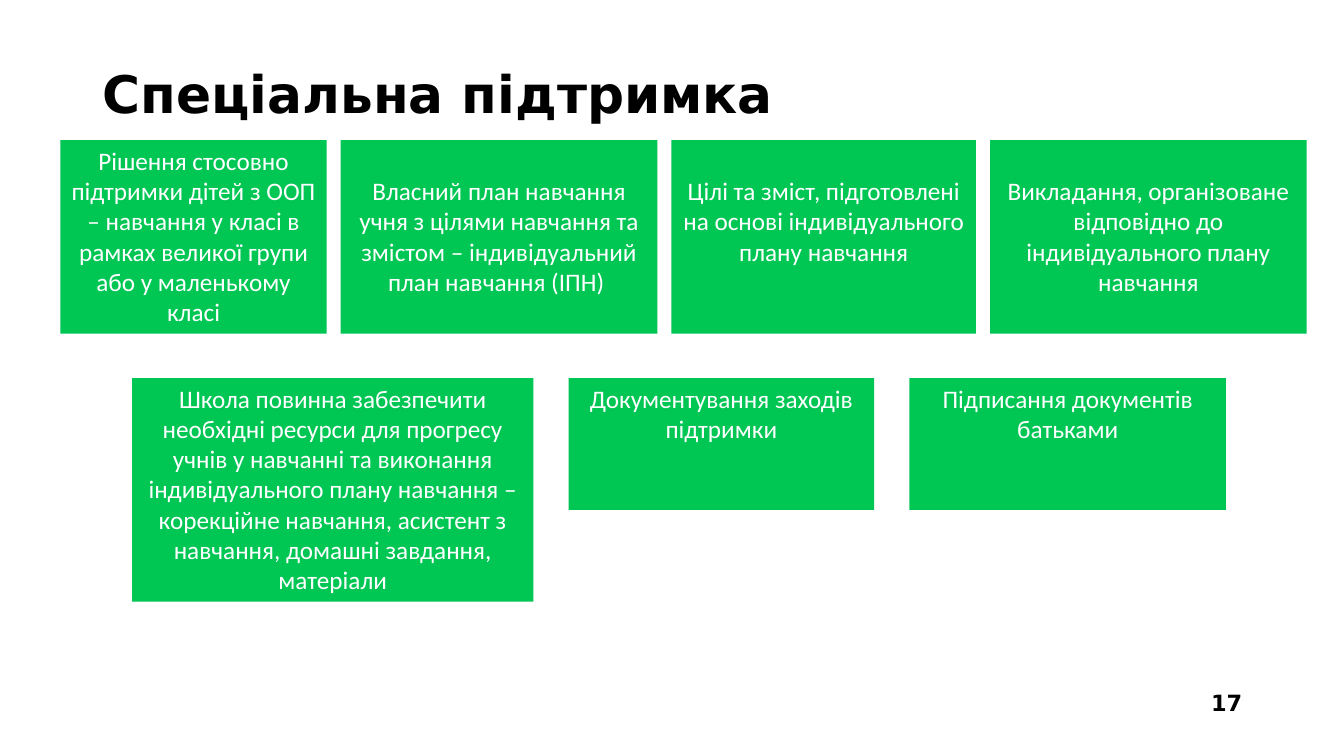
from pptx import Presentation
from pptx.dml.color import RGBColor
from pptx.enum.shapes import MSO_SHAPE
from pptx.enum.text import MSO_ANCHOR, MSO_AUTO_SIZE, PP_ALIGN
from pptx.util import Inches, Pt

RECTANGLE = MSO_SHAPE.RECTANGLE
TOP, MIDDLE = MSO_ANCHOR.TOP, MSO_ANCHOR.MIDDLE
LEFT, CENTER, RIGHT = PP_ALIGN.LEFT, PP_ALIGN.CENTER, PP_ALIGN.RIGHT
NO_FIT = MSO_AUTO_SIZE.NONE
TITLE_ONLY = 5

COLORS = {"card": "00C654", "card_text": "FFFFFF", "text": "000000"}
HEADING_FONT, CARD_FONT = "DejaVu Sans", "Calibri"

MAIN_CARDS = [
    (2.64, 1.92, 0.05, "Рішення стосовно підтримки дітей з ООП – навчання у класі в рамках "
     "великої групи або у маленькому класі"),
    (3.14, 1.92, 0.35, "Власний план навчання учня з цілями навчання та змістом – "
     "індивідуальний план навчання (ІПН) "),
    (3.02, 1.92, 0.35, "Цілі та зміст, підготовлені на основі індивідуального плану навчання"),
    (3.14, 1.92, 0.35, "Викладання, організоване відповідно до індивідуального плану навчання"),
]
SUPPORT_CARDS = [
    (3.98, 2.22, 0.05, "Школа повинна забезпечити необхідні ресурси для прогресу учнів у "
     "навчанні та виконання індивідуального плану навчання – корекційне навчання, "
     "асистент з навчання, домашні завдання, матеріали"),
    (3.03, 1.31, 0.05, "Документування заходів підтримки"),
    (3.14, 1.31, 0.05, "Підписання документів батьками"),
]


def write_text(shape, text, *, font, size, color, bold=False, align=LEFT,
               anchor=MIDDLE, top=0.05, bottom=0.05, spacing=1.0):
    """Fill a shape with one formatted paragraph."""
    frame = shape.text_frame
    frame.word_wrap = True
    frame.auto_size = NO_FIT
    frame.vertical_anchor = anchor
    frame.margin_left = frame.margin_right = Inches(0.1)
    frame.margin_top, frame.margin_bottom = Inches(top), Inches(bottom)
    para = frame.paragraphs[0]
    para.alignment, para.line_spacing = align, spacing
    span = para.add_run()
    span.text = text
    span.font.name, span.font.size, span.font.bold = font, Pt(size), bold
    span.font.color.rgb = RGBColor.from_string(COLORS[color])


def place_title(page, left, top, width, height):
    """Put the heading into the title placeholder."""
    title = page.shapes.title
    title.left, title.top = Inches(left), Inches(top)
    title.width, title.height = Inches(width), Inches(height)
    write_text(title, "Спеціальна підтримка", font=HEADING_FONT, size=37,
               color="text", bold=True, bottom=0.56, spacing=1.15)


def place_cards(page, left, top, gap, cards):
    """Lay out a row of green cards from left to right with equal gaps."""
    for width, height, inset, text in cards:
        card = page.shapes.add_shape(RECTANGLE, Inches(left), Inches(top),
                                     Inches(width), Inches(height))
        card.shadow.inherit = False
        card.fill.solid()
        card.fill.fore_color.rgb = RGBColor.from_string(COLORS["card"])
        card.line.fill.background()
        write_text(card, text, font=CARD_FONT, size=18, color="card_text",
                   align=CENTER, anchor=TOP, top=inset)
        left += width + gap


def place_page_number(page, left, top, width, height):
    """Write the page number in the lower right corner."""
    box = page.shapes.add_textbox(Inches(left), Inches(top), Inches(width), Inches(height))
    write_text(box, "17", font=HEADING_FONT, size=16, color="text", bold=True, align=RIGHT)


def main():
    """Build and save the deck."""
    deck = Presentation()
    deck.slide_width, deck.slide_height = Inches(13.33), Inches(7.5)
    page = deck.slides.add_slide(deck.slide_layouts[TITLE_ONLY])
    place_title(page, 0.92, 0.4, 11.5, 1.45)
    place_cards(page, 0.6, 1.39, 0.14, MAIN_CARDS)
    place_cards(page, 1.31, 3.75, 0.35, SUPPORT_CARDS)
    place_page_number(page, 11.58, 6.77, 0.84, 0.4)
    deck.save("out.pptx")


if __name__ == "__main__":
    main()
